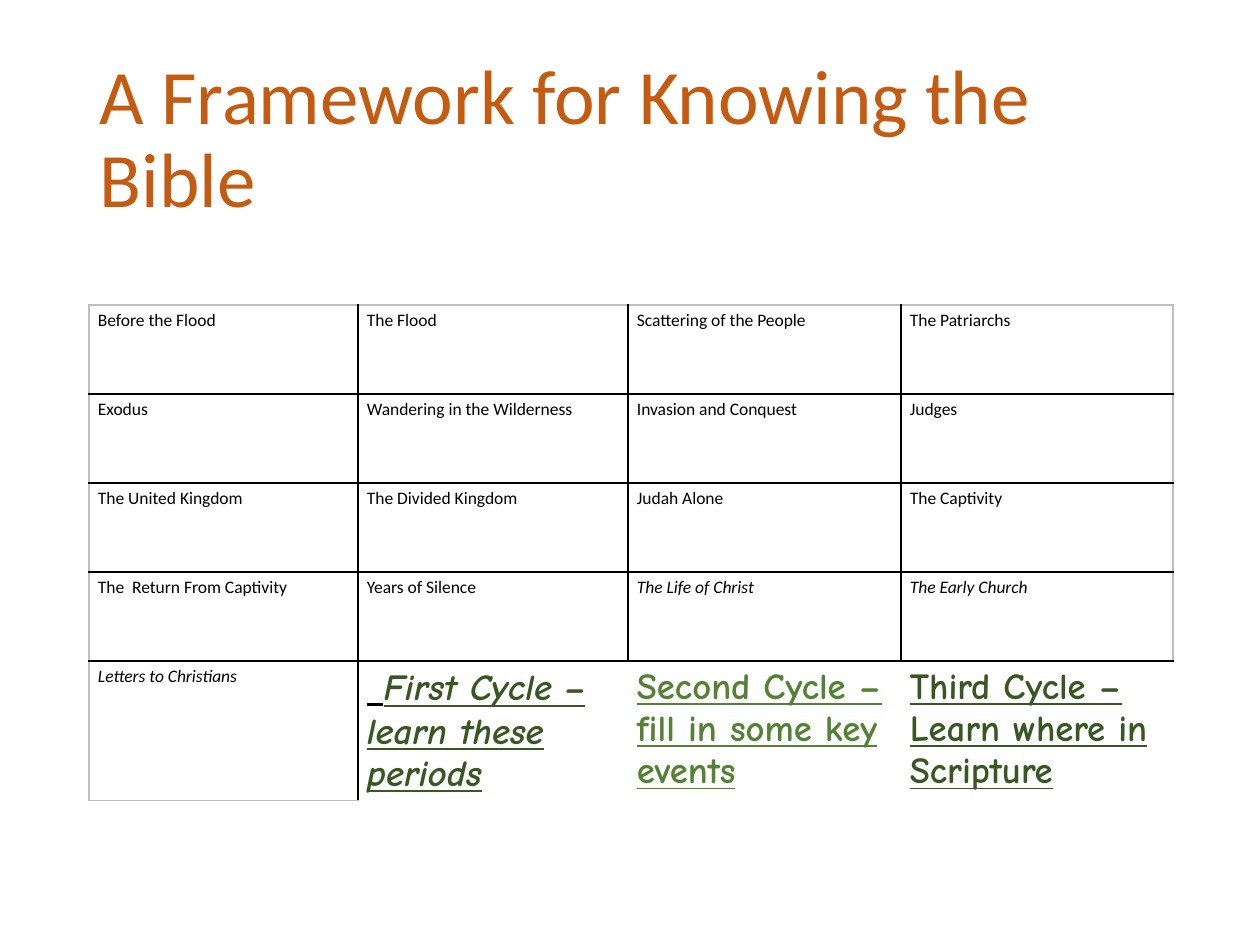
from lxml.etree import SubElement
from pptx import Presentation
from pptx.dml.color import RGBColor
from pptx.enum.text import MSO_ANCHOR, MSO_AUTO_SIZE, PP_ALIGN
from pptx.oxml.ns import qn
from pptx.util import Emu, Pt

EMU_PER_PX = 914400 / 126
BLACK, GREY, ORANGE = "000000", "BFBFBF", "C55A11"
DARK_GREEN, GREEN = "385723", "548235"

PERIODS = [
    ["Before the Flood", "The Flood", "Scattering of the People", "The Patriarchs"],
    ["Exodus", "Wandering in the Wilderness", "Invasion and Conquest", "Judges"],
    ["The United Kingdom", "The Divided Kingdom", "Judah Alone", "The Captivity"],
    ["The  Return From Captivity", "Years of Silence", "The Life of Christ", "The Early Church"],
    ["Letters to Christians"],
]
NEW_TESTAMENT = {"The Life of Christ", "The Early Church", "Letters to Christians"}
CYCLES = [
    ("First Cycle – learn these periods", DARK_GREEN, True),
    ("Second Cycle – fill in some key events", GREEN, False),
    ("Third Cycle – Learn where in Scripture", DARK_GREEN, False),
]
COLUMN_WIDTHS = [269, 270, 273, 272]
ROW_HEIGHTS = [89, 89, 89, 89, 98]
# Edge tag: (row step, column step) to the neighbouring cell
EDGES = {"lnL": (0, -1), "lnR": (0, 1), "lnT": (-1, 0), "lnB": (1, 0)}


def px(length):
    return Emu(round(length * EMU_PER_PX))


def color(value):
    return RGBColor.from_string(value)


def format_run(run, size, name, value, italic=False, heading=False):
    font = run.font
    font.size, font.name = Pt(size), name
    font.color.rgb = color(value)
    font.italic, font.bold, font.underline = italic, heading, heading


def add_title(slide, text):
    title = slide.shapes.title
    title.left, title.top, title.width, title.height = px(87), px(50), px(1086), px(183)
    frame = title.text_frame
    frame.text = text
    frame.word_wrap = True
    frame.auto_size = MSO_AUTO_SIZE.NONE
    frame.vertical_anchor = MSO_ANCHOR.MIDDLE
    paragraph = frame.paragraphs[0]
    paragraph.alignment = PP_ALIGN.LEFT
    paragraph.line_spacing = 0.9
    format_run(paragraph.runs[0], 44, "Calibri", ORANGE)


def is_period(row, column):
    return 0 <= row < len(PERIODS) and 0 <= column < len(PERIODS[row])


def border_color(row, column, neighbour):
    """Period cells are framed: black inside the table, grey along its rim."""
    if not (is_period(row, column) or is_period(*neighbour)):
        return None
    inside = 0 <= neighbour[0] < len(ROW_HEIGHTS) and 0 <= neighbour[1] < len(COLUMN_WIDTHS)
    return BLACK if inside else GREY


def set_borders(cell, row, column):
    properties = cell._tc.get_or_add_tcPr()
    for tag, (row_step, column_step) in EDGES.items():
        value = border_color(row, column, (row + row_step, column + column_step))
        line = SubElement(properties, qn(f"a:{tag}"), w=str(Pt(1)))
        if value:
            fill = SubElement(line, qn("a:solidFill"))
            SubElement(fill, qn("a:srgbClr"), val=value)
        else:
            SubElement(line, qn("a:noFill"))


def fill_period(cell, text):
    cell.text = text
    run = cell.text_frame.paragraphs[0].runs[0]
    format_run(run, 10, "Calibri", BLACK, italic=text in NEW_TESTAMENT)


def fill_cycle(cell, text, value, italic):
    paragraph = cell.text_frame.paragraphs[0]
    if italic:
        # The first cycle opens with a short black underline
        lead = paragraph.add_run()
        lead.text = "  "
        format_run(lead, 21, "Calibri", BLACK, heading=True)
    run = paragraph.add_run()
    run.text = text
    format_run(run, 21, "Comic Neue", value, italic, heading=True)


def add_periods_table(slide):
    frame = slide.shapes.add_table(
        len(ROW_HEIGHTS), len(COLUMN_WIDTHS), px(89), px(305),
        px(sum(COLUMN_WIDTHS)), px(sum(ROW_HEIGHTS)))
    table = frame.table
    table.first_row = table.horz_banding = False
    for column, width in zip(table.columns, COLUMN_WIDTHS):
        column.width = px(width)
    for row, height in zip(table.rows, ROW_HEIGHTS):
        row.height = px(height)

    for row in range(len(ROW_HEIGHTS)):
        for column in range(len(COLUMN_WIDTHS)):
            cell = table.cell(row, column)
            cell.margin_left = cell.margin_right = px(9)
            cell.margin_top = cell.margin_bottom = px(5)
            set_borders(cell, row, column)
            cell.fill.background()
            if is_period(row, column):
                fill_period(cell, PERIODS[row][column])
            else:
                fill_cycle(cell, *CYCLES[column - 1])


def main():
    presentation = Presentation()
    presentation.slide_width, presentation.slide_height = px(1260), px(945)
    slide = presentation.slides.add_slide(presentation.slide_layouts[5])
    add_title(slide, "A Framework for Knowing the Bible")
    add_periods_table(slide)
    presentation.save("out.pptx")


if __name__ == "__main__":
    main()
